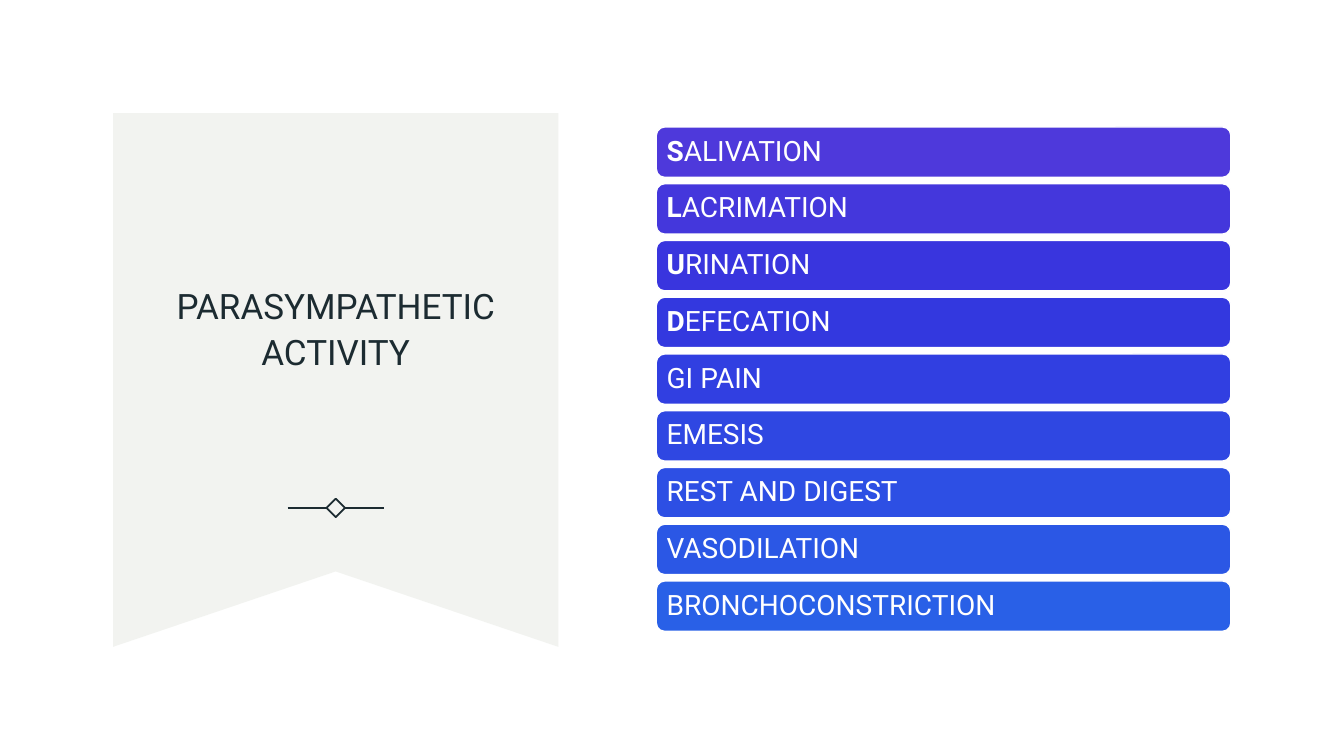
from dataclasses import dataclass

from lxml import etree
from pptx import Presentation
from pptx import util as u
from pptx.dml.color import RGBColor
from pptx.enum import shapes, text
from pptx.oxml.ns import qn

COLOURS = {"banner": "F2F3F0", "ink": "1C2B31", "white": "FFFFFF"}
FONT = "Roboto"
BAR_LEFT, BAR_TOP, BAR_WIDTH, BAR_HEIGHT, BAR_STEP = 16.54, 3.2, 14.48, 1.27, 1.43
BANNER_POINTS = [(2.85, 2.85), (14.07, 2.85), (14.07, 16.3), (8.46, 14.4), (2.85, 16.3)]
CENTRE_X, CENTRE_Y = 8.46, 12.8
SQUARE_SIDE, LINE_NEAR, LINE_FAR = 0.33, 0.23, 1.21


@dataclass
class Effect:
    initial: str
    rest: str
    fill: str


EFFECTS = [
    Effect("S", "ALIVATION", "4E39DB"),
    Effect("L", "ACRIMATION", "4437DC"),
    Effect("U", "RINATION", "3935DE"),
    Effect("D", "EFECATION", "3338DF"),
    Effect("", "GI PAIN", "313FE1"),
    Effect("", "EMESIS", "2F47E2"),
    Effect("", "REST AND DIGEST", "2D4FE4"),
    Effect("", "VASODILATION", "2B57E5"),
    Effect("", "BRONCHOCONSTRICTION", "2960E7"),
]


def colour(value: str) -> RGBColor:
    return RGBColor.from_string(value)


def set_fill(shape, value: str) -> None:
    shape.shadow.inherit = False
    shape.fill.solid()
    shape.fill.fore_color.rgb = colour(value)


def set_line(shape, value: str, width: float) -> None:
    shape.line.color.rgb = colour(value)
    shape.line.width = u.Pt(width)


def set_font(paragraph, size: int, value: str) -> None:
    paragraph.font.name = FONT
    paragraph.font.size = u.Pt(size)
    paragraph.font.color.rgb = colour(value)


def draw_banner(page) -> None:
    points = [(u.Cm(x), u.Cm(y)) for x, y in BANNER_POINTS]
    builder = page.shapes.build_freeform(*points[0])
    builder.add_line_segments(points[1:], close=True)
    banner = builder.convert_to_shape()
    set_fill(banner, COLOURS["banner"])
    banner.line.fill.background()


def write_title(page) -> None:
    title = page.shapes.title
    title.left, title.top = u.Cm(3.95), u.Cm(4.6)
    title.width, title.height = u.Cm(9.02), u.Cm(7.24)
    frame = title.text_frame
    frame.word_wrap = True
    frame.auto_size = text.MSO_AUTO_SIZE.NONE
    frame.vertical_anchor = text.MSO_ANCHOR.MIDDLE
    frame.text = "PARASYMPATHETIC ACTIVITY"
    paragraph = frame.paragraphs[0]
    paragraph.alignment = text.PP_ALIGN.CENTER
    paragraph.line_spacing = 1.1
    set_font(paragraph, 25, COLOURS["ink"])


def draw_ornament(page) -> None:
    square = page.shapes.add_shape(
        shapes.MSO_SHAPE.RECTANGLE,
        u.Cm(CENTRE_X - SQUARE_SIDE / 2), u.Cm(CENTRE_Y - SQUARE_SIDE / 2),
        u.Cm(SQUARE_SIDE), u.Cm(SQUARE_SIDE),
    )
    square.rotation = 45
    square.shadow.inherit = False
    square.fill.background()
    set_line(square, COLOURS["ink"], 1.25)
    for start, end in [(-LINE_FAR, -LINE_NEAR), (LINE_NEAR, LINE_FAR)]:
        line = page.shapes.add_connector(
            shapes.MSO_CONNECTOR.STRAIGHT,
            u.Cm(CENTRE_X + start), u.Cm(CENTRE_Y),
            u.Cm(CENTRE_X + end), u.Cm(CENTRE_Y),
        )
        set_line(line, COLOURS["ink"], 1.25)
        etree.SubElement(line._element.spPr, qn("a:effectLst"))


def draw_bar(page, effect: Effect, top: float) -> None:
    bar = page.shapes.add_shape(
        shapes.MSO_SHAPE.ROUNDED_RECTANGLE,
        u.Cm(BAR_LEFT), u.Cm(top), u.Cm(BAR_WIDTH), u.Cm(BAR_HEIGHT),
    )
    set_fill(bar, effect.fill)
    set_line(bar, COLOURS["white"], 1)
    frame = bar.text_frame
    frame.word_wrap = True
    frame.vertical_anchor = text.MSO_ANCHOR.MIDDLE
    frame.margin_left = frame.margin_right = u.Cm(0.2)
    frame.margin_top = frame.margin_bottom = u.Cm(0.2)
    paragraph = frame.paragraphs[0]
    paragraph.alignment = text.PP_ALIGN.LEFT
    paragraph.line_spacing = 0.9
    set_font(paragraph, 20, COLOURS["white"])
    if effect.initial:
        span = paragraph.add_run()
        span.text = effect.initial
        span.font.bold = True
    paragraph.add_run().text = effect.rest


def main() -> None:
    deck = Presentation()
    deck.slide_width, deck.slide_height = u.Cm(33.87), u.Cm(19.05)
    page = deck.slides.add_slide(deck.slide_layouts.get_by_name("Title Only"))
    page.background.fill.solid()
    page.background.fill.fore_color.rgb = colour(COLOURS["white"])
    draw_banner(page)
    write_title(page)
    title_element = page.shapes.title._element
    title_element.getparent().append(title_element)
    draw_ornament(page)
    for index, effect in enumerate(EFFECTS):
        draw_bar(page, effect, BAR_TOP + index * BAR_STEP)
    deck.save("out.pptx")


if __name__ == "__main__":
    main()
